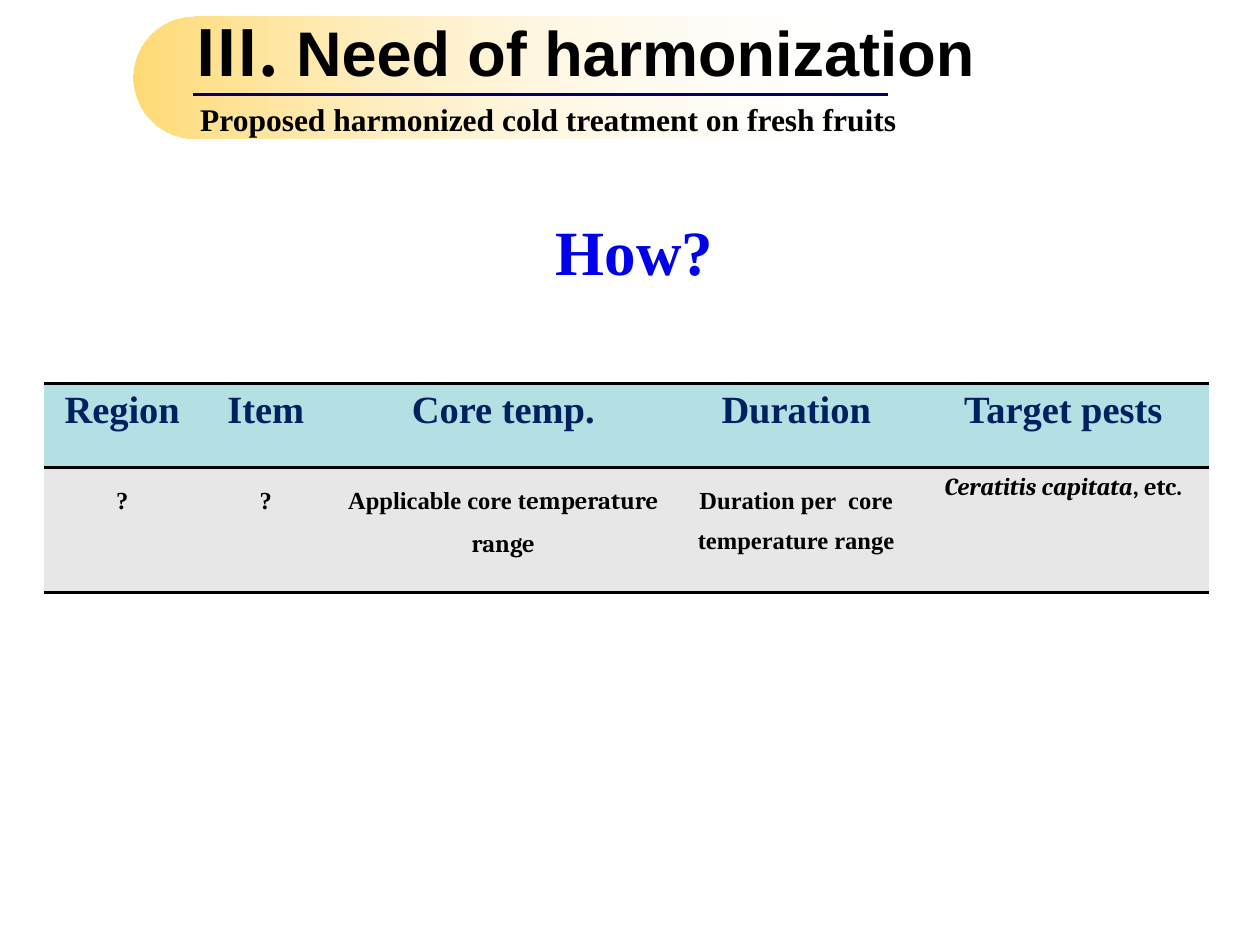
from dataclasses import dataclass
from typing import NamedTuple

from lxml.etree import SubElement
from pptx import Presentation
from pptx.dml.color import RGBColor
from pptx.enum.shapes import MSO_CONNECTOR as Connector, MSO_SHAPE as Shape
from pptx.enum.text import MSO_ANCHOR as Anchor, PP_ALIGN as Align
from pptx.oxml.ns import qn
from pptx.util import Inches, Pt


@dataclass(frozen=True)
class Theme:
    serif: str = "Times New Roman"
    sans: str = "Arial"
    cambria: str = "Cambria"
    korean: str = "Noto Sans CJK KR"
    black: str = "000000"
    navy: str = "002060"
    rule: str = "000066"
    blue: str = "0000EA"
    gold: str = "FFD253"
    white: str = "FFFFFF"
    header_fill: str = "B5E0E3"
    body_fill: str = "E7E7E7"
    heading: float = 36
    subtitle: float = 18
    header: float = 22
    body: float = 14
    border: float = 2


class Span(NamedTuple):
    text: str
    font: str = ""
    italic: bool = False


class Box(NamedTuple):
    left: float
    top: float
    width: float
    height: float

    def lengths(self) -> list:
        return [Inches(value) for value in self]


class Column(NamedTuple):
    heading: str
    width: float
    content: list
    spacing: float = 1.5


THEME = Theme()
NO_STYLE_TABLE = "{2D5ABB26-0587-4C30-8999-92F81FD0307C}"
COLUMNS = [
    Column("Region", 1.24, [Span("?")]),
    Column("Item", 1.04, [Span("?")]),
    Column("Core temp.", 2.73, [Span("Applicable core t"),
                                Span("emperature range", THEME.cambria)]),
    Column("Duration", 1.92, [Span("Duration per  core temperature range")]),
    Column("Target pests", 2.32, [Span("Ceratitis capitata", THEME.cambria, True),
                                  Span(", etc.", THEME.cambria)], 1.0),
]
ROW_HEIGHTS = [0.67, 0.99]


def write(frame, spans: list, *, size: float, color: str = THEME.black,
          font: str = THEME.serif, align=Align.LEFT, spacing: float = 1.0) -> None:
    """Fill a text frame with one bold paragraph; a span may override the font."""
    paragraph = frame.paragraphs[0]
    paragraph.alignment = align
    paragraph.line_spacing = spacing
    for span in spans:
        run = paragraph.add_run()
        run.text = span.text
        run.font.size = Pt(size)
        run.font.bold = True
        run.font.italic = span.italic
        run.font.color.rgb = RGBColor.from_string(color)
        run.font.name = span.font or font
        east_asian = SubElement(run.font._element, qn("a:ea"))
        east_asian.set("typeface", span.font or font)


def add_rounded(slide, box: Box, rounding: float):
    shape = slide.shapes.add_shape(Shape.ROUNDED_RECTANGLE, *box.lengths())
    shape.adjustments[0] = rounding
    shape.shadow.inherit = False
    shape.fill.background()
    shape.line.fill.background()
    return shape


def add_fading_banner(slide, box: Box) -> None:
    fill = add_rounded(slide, box, 0.5).fill
    fill.gradient()
    fill.gradient_angle = 0
    fades = [(THEME.gold, 80), (THEME.white, 0)]
    for stop, (color, opacity) in zip(fill.gradient_stops, fades):
        stop.color.rgb = RGBColor.from_string(color)
        color_element = stop._gs.find(qn("a:srgbClr"))
        SubElement(color_element, qn("a:alpha")).set("val", str(opacity * 1000))


def add_banner_text(slide, box: Box, spans: list, **text_format) -> None:
    frame = add_rounded(slide, box, 0).text_frame
    frame.word_wrap = False
    frame.vertical_anchor = Anchor.MIDDLE
    write(frame, spans, **text_format)


def add_rule(slide, left: float, right: float, y: float) -> None:
    rule = slide.shapes.add_connector(
        Connector.STRAIGHT, Inches(left), Inches(y), Inches(right), Inches(y))
    rule.line.color.rgb = RGBColor.from_string(THEME.rule)
    rule.line.width = Pt(2.25)
    SubElement(rule._element.spPr, qn("a:effectLst"))


def add_border(cell, side: str) -> None:
    line = SubElement(cell._tc.get_or_add_tcPr(), qn(f"a:{side}"))
    line.set("w", str(Pt(THEME.border)))
    fill = SubElement(line, qn("a:solidFill"))
    SubElement(fill, qn("a:srgbClr")).set("val", THEME.black)


def style_cell(cell, fill: str, borders: list) -> None:
    for side in borders:
        add_border(cell, side)
    cell.fill.solid()
    cell.fill.fore_color.rgb = RGBColor.from_string(fill)


def add_treatment_table(slide, left: float, top: float) -> None:
    box = Box(left, top, sum(c.width for c in COLUMNS), sum(ROW_HEIGHTS))
    frame = slide.shapes.add_table(len(ROW_HEIGHTS), len(COLUMNS), *box.lengths())
    table = frame.table
    table.first_row = table.horz_banding = False
    table._tbl.tblPr.find(qn("a:tableStyleId")).text = NO_STYLE_TABLE
    for row, height in zip(table.rows, ROW_HEIGHTS):
        row.height = Inches(height)
    for index, column in enumerate(COLUMNS):
        table.columns[index].width = Inches(column.width)
        header, body = table.cell(0, index), table.cell(1, index)
        style_cell(header, THEME.header_fill, ["lnT", "lnB"])
        write(header.text_frame, [Span(column.heading)], size=THEME.header,
              color=THEME.navy, align=Align.CENTER)
        style_cell(body, THEME.body_fill, ["lnT", "lnB"])
        write(body.text_frame, column.content, size=THEME.body,
              align=Align.CENTER, spacing=column.spacing)


def main() -> None:
    deck = Presentation()
    deck.slide_width, deck.slide_height = Inches(10), Inches(7.5)
    slide = deck.slides.add_slide(deck.slide_layouts[6])

    add_fading_banner(slide, Box(1.06, 0.13, 6.13, 0.97))
    add_banner_text(slide, Box(1.45, 0.05, 5.21, 0.71),
                    [Span("Ⅲ.", THEME.korean), Span(" Need of harmonization")],
                    size=THEME.heading, font=THEME.sans)
    add_rule(slide, 1.53, 7.05, 0.75)
    add_banner_text(slide, Box(1.49, 0.76, 6.81, 0.31),
                    [Span("Proposed harmonized cold treatment on fresh fruits")],
                    size=THEME.subtitle, spacing=1.2)

    add_treatment_table(slide, 0.35, 3.04)

    question = slide.shapes.add_textbox(*Box(0.47, 1.64, 9.13, 0.71).lengths())
    question.text_frame.word_wrap = True
    write(question.text_frame, [Span("How?")], size=THEME.heading,
          color=THEME.blue, align=Align.CENTER)

    deck.save("out.pptx")


if __name__ == "__main__":
    main()
